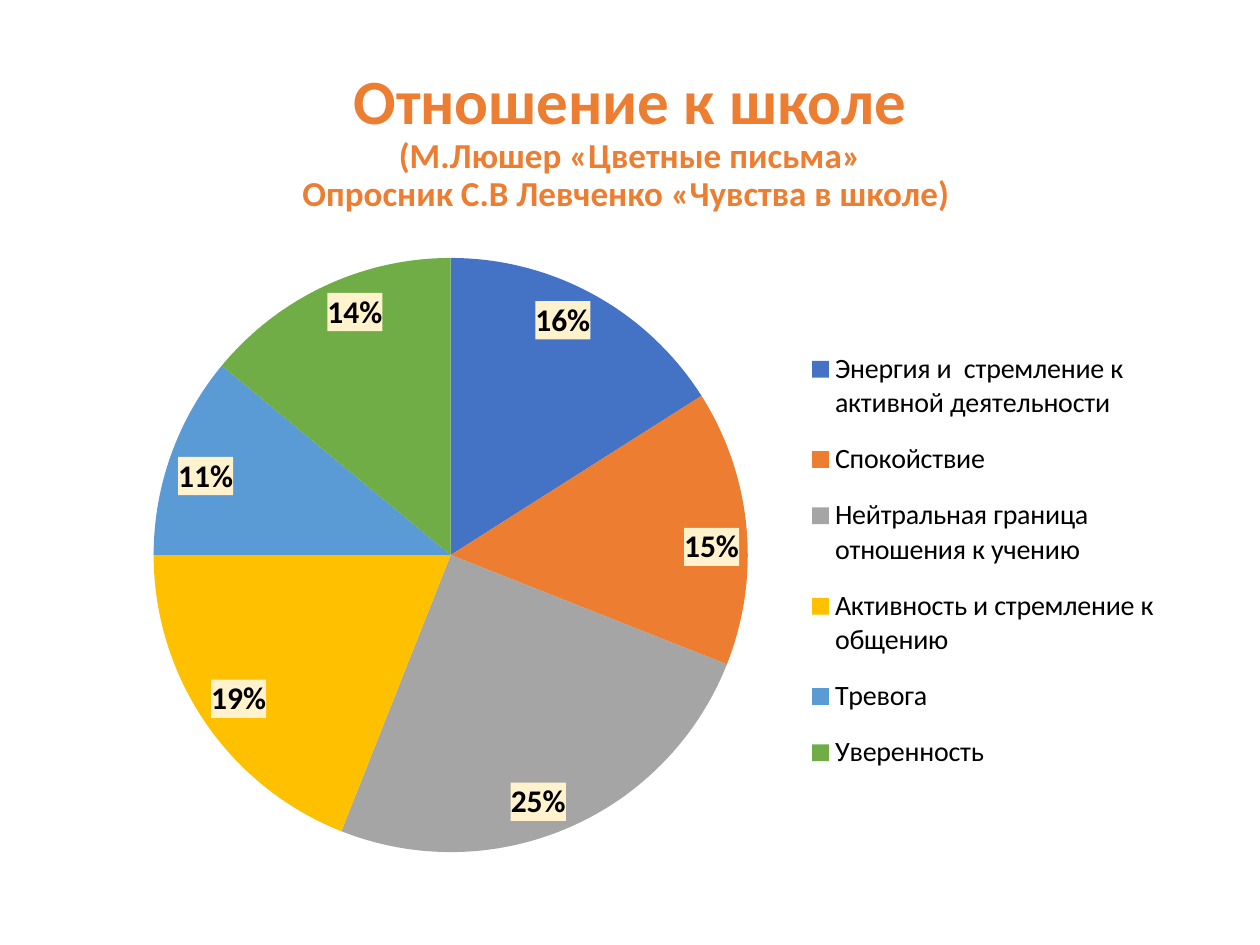
from pptx import Presentation
from pptx import util as u
from pptx.chart.data import CategoryChartData
from pptx.dml.color import RGBColor
from pptx.enum import chart as ch, text
from pptx.oxml import parse_xml
from pptx.oxml.ns import nsdecls

FONT = "Calibri"
COLORS = {"heading": "ED7D31", "text": "000000", "label": "FFF2CC"}
HEADING = [
    ("Отношение к школе", 36),
    ("(М.Люшер «Цветные письма»", 20),
    ("Опросник С.В Левченко «Чувства в школе) ", 20),
]
FEELINGS = [
    ("Энергия и  стремление к активной деятельности", 0.16, "4472C4"),
    ("Спокойствие", 0.15, "ED7D31"),
    ("Нейтральная граница отношения к учению", 0.25, "A5A5A5"),
    ("Активность и стремление к общению", 0.19, "FFC000"),
    ("Тревога", 0.11, "5B9BD5"),
    ("Уверенность", 0.14, "70AD47"),
]
LEFT, WIDTH = u.Cm(1.75), u.Cm(21.9)
PIE_AREA = (0.06, 0.01, 0.55, 0.99)
LEGEND_AREA = (0.66, 0.13, 0.33, 0.77)


def style(font, size, color="text", bold=False):
    font.name, font.size, font.bold = FONT, u.Pt(size), bold
    font.color.rgb = RGBColor.from_string(COLORS[color])


def manual_layout(area, inner=False):
    target = '<c:layoutTarget val="inner"/>' if inner else ""
    modes = "".join(f'<c:{axis}Mode val="edge"/>' for axis in "xy")
    sizes = "".join(f'<c:{side} val="{value}"/>' for side, value in zip("xywh", area))
    return parse_xml(
        f'<c:layout {nsdecls("c")}><c:manualLayout>{target}{modes}{sizes}'
        "</c:manualLayout></c:layout>"
    )


def add_heading(slide):
    box = slide.shapes.add_textbox(LEFT, u.Cm(1.02), WIDTH, u.Cm(3.68))
    frame = box.text_frame
    frame.word_wrap = True
    frame.vertical_anchor = text.MSO_ANCHOR.MIDDLE
    lines = frame.paragraphs[0]
    lines.alignment = text.PP_ALIGN.CENTER
    lines.line_spacing = 0.9
    for index, (wording, size) in enumerate(HEADING):
        if index:
            lines.add_line_break()
        run = lines.add_run()
        run.text = wording
        style(run.font, size, "heading", True)


def add_feelings_pie(slide):
    data = CategoryChartData(number_format="0%")
    data.categories = [name for name, _, _ in FEELINGS]
    data.add_series("Series 1", [share for _, share, _ in FEELINGS])
    pie = slide.shapes.add_chart(
        ch.XL_CHART_TYPE.PIE, LEFT, u.Cm(5.08), WIDTH, u.Cm(12.1), data
    ).chart
    style(pie.font, 18)
    pie.has_title = False

    plot = pie.plots[0]
    plot.vary_by_categories = True
    for index, (_, _, color) in enumerate(FEELINGS):
        fill = plot.series[0].points[index].format.fill
        fill.solid()
        fill.fore_color.rgb = RGBColor.from_string(color)

    plot.has_data_labels = True
    labels = plot.data_labels
    labels.show_value = True
    labels.show_percentage = False
    labels.number_format, labels.number_format_is_linked = "0%", False
    labels.position = ch.XL_LABEL_POSITION.INSIDE_END
    style(labels.font, 18, bold=True)
    label_fill = parse_xml(
        f'<c:spPr {nsdecls("c", "a")}><a:solidFill>'
        f'<a:srgbClr val="{COLORS["label"]}"/></a:solidFill></c:spPr>'
    )
    labels._element.find(".//{*}txPr").addprevious(label_fill)

    pie.has_legend = True
    legend = pie.legend
    legend.position = ch.XL_LEGEND_POSITION.RIGHT
    legend.include_in_layout = False
    style(legend.font, 16)

    plot_area = pie._chartSpace.chart.plotArea
    for parent, layout in (
        (plot_area, manual_layout(PIE_AREA, inner=True)),
        (legend._element, manual_layout(LEGEND_AREA)),
    ):
        for old in parent.findall("{*}layout"):
            parent.remove(old)
        parent.insert(0 if parent is plot_area else 1, layout)


def main():
    deck = Presentation()
    deck.slide_width, deck.slide_height = u.Cm(25.4), u.Cm(19.05)
    slide = deck.slides.add_slide(deck.slide_layouts[6])
    add_heading(slide)
    add_feelings_pie(slide)
    deck.save("out.pptx")


if __name__ == "__main__":
    main()
